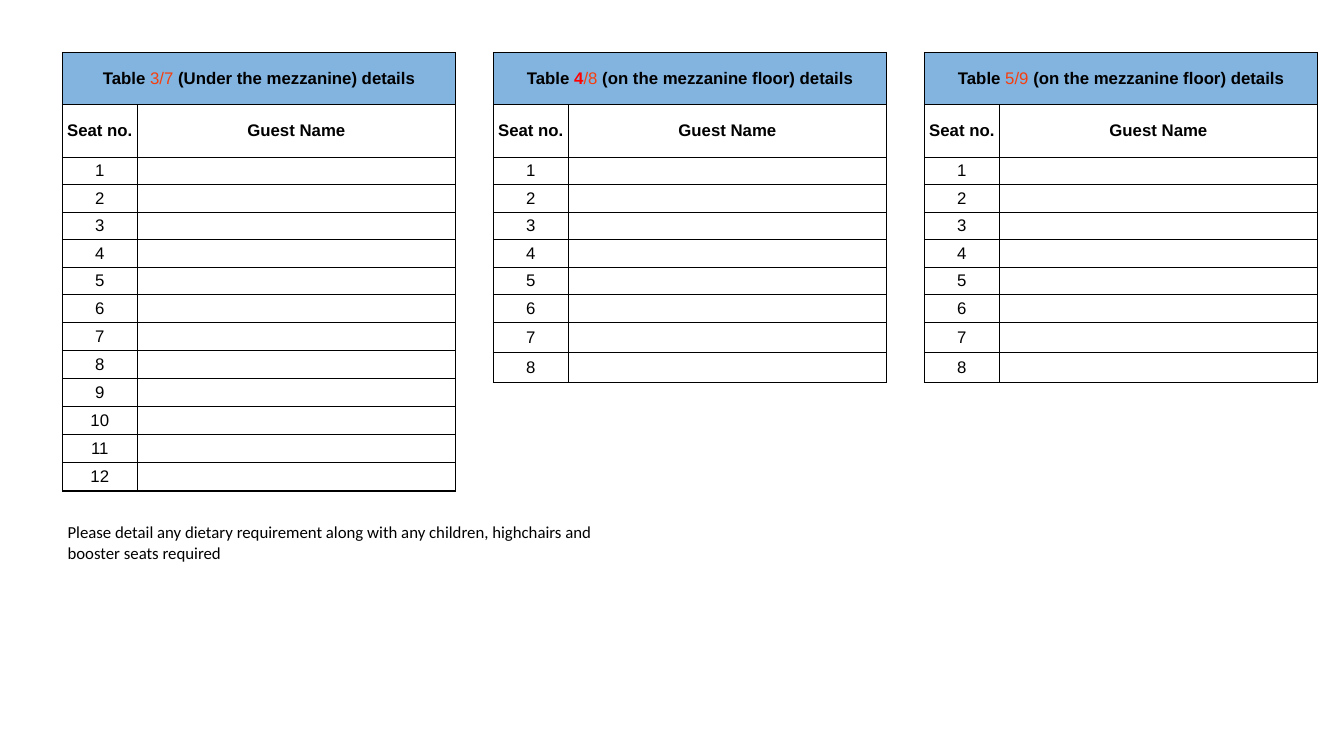
"""Builds a slide of three seating tables with a note on dietary requirements."""
from dataclasses import dataclass

from lxml import etree
from pptx import Presentation
from pptx import util as u
from pptx.dml.color import RGBColor
from pptx.enum import text
from pptx.oxml.ns import qn

COLUMN, ROW = 0.1, 0.13
LEFT, TOP, PITCH = 6.2, 4, 42.75
SEAT_WIDTH, NAME_WIDTH = 7.4, 31.6
HEADER_HEIGHT, SEAT_HEIGHT = 4, 2.1
EVEN_SEATS = 6
BLACK, WHITE, BLUE, ORANGE, RED = "000000", "FFFFFF", "83B3DF", "F53F0E", "FF0000"
NOTE = ("Please detail any dietary requirement along with any children, "
        "highchairs and booster seats required")


@dataclass(frozen=True)
class Span:
    words: str
    colour: str = BLACK
    bold: bool = True


@dataclass(frozen=True)
class Seating:
    number: tuple[Span, ...]
    place: str
    seats: int
    late_height: float


SEATINGS = (
    Seating((Span("3/7 ", ORANGE, False),), "Under the mezzanine", 12, 2.15),
    Seating((Span("4", RED), Span("/8 ", ORANGE, False)), "on the mezzanine floor", 8, 2.3),
    Seating((Span("5/9 ", ORANGE, False),), "on the mezzanine floor", 8, 2.3),
)


def across(columns: float) -> u.Length:
    return u.Inches(columns * COLUMN)


def down(rows: float) -> u.Length:
    return u.Inches(rows * ROW)


def paint(fill, colour: str) -> None:
    fill.solid()
    fill.fore_color.rgb = RGBColor.from_string(colour)


def write(para, spans: tuple[Span, ...], face: str = "Arial") -> None:
    for span in spans:
        run = para.add_run()
        run.text = span.words
        run.font.name, run.font.size, run.font.bold = face, u.Pt(12), span.bold
        run.font.color.rgb = RGBColor.from_string(span.colour)


def outline(cell) -> None:
    properties = cell._tc.get_or_add_tcPr()
    for side in ("a:lnL", "a:lnR", "a:lnT", "a:lnB"):
        line = etree.SubElement(properties, qn(side), w=str(u.Pt(1)))
        solid = etree.SubElement(line, qn("a:solidFill"))
        etree.SubElement(solid, qn("a:srgbClr"), val=BLACK)


def fill_cell(cell, spans: tuple[Span, ...] = ()) -> None:
    cell.margin_left = cell.margin_right = cell.margin_top = cell.margin_bottom = 0
    cell.vertical_anchor = text.MSO_ANCHOR.MIDDLE
    para = cell.text_frame.paragraphs[0]
    para.alignment = text.PP_ALIGN.CENTER
    write(para, spans)
    if not spans:
        etree.SubElement(para._p, qn("a:endParaRPr"), sz="1200")


def add_seating(page, seating: Seating, left: float) -> None:
    heights = [HEADER_HEIGHT] * 2 + [
        SEAT_HEIGHT if seat < EVEN_SEATS else seating.late_height
        for seat in range(seating.seats)]
    table = page.shapes.add_table(
        len(heights), 2, across(left), down(TOP),
        across(SEAT_WIDTH + NAME_WIDTH), down(sum(heights))).table
    table.first_row = table.horz_banding = False
    for column, width in zip(table.columns, (SEAT_WIDTH, NAME_WIDTH)):
        column.width = across(width)
    for row, height in zip(table.rows, heights):
        row.height = down(height)
    for cell in table.iter_cells():
        outline(cell)
        cell.fill.background()

    title = table.cell(0, 0)
    title.merge(table.cell(0, 1))
    paint(title.fill, BLUE)
    fill_cell(title, (Span("Table "), *seating.number, Span(f"({seating.place}) details")))
    fill_cell(table.cell(1, 0), (Span("Seat no."),))
    fill_cell(table.cell(1, 1), (Span("Guest Name"),))
    for seat in range(1, seating.seats + 1):
        fill_cell(table.cell(seat + 1, 0), (Span(str(seat), bold=False),))
        fill_cell(table.cell(seat + 1, 1))


def add_note(page) -> None:
    box = page.shapes.add_textbox(across(LEFT), down(39.46), across(54.5), down(3.85))
    paint(box.fill, WHITE)
    frame = box.text_frame
    frame.word_wrap = True
    frame.auto_size = text.MSO_AUTO_SIZE.SHAPE_TO_FIT_TEXT
    frame.margin_left = frame.margin_right = u.Inches(0.05)
    frame.margin_top = frame.margin_bottom = u.Inches(0.05)
    write(frame.paragraphs[0], (Span(NOTE, bold=False),), "Calibri")


def main() -> None:
    deck = Presentation()
    deck.slide_width, deck.slide_height = u.Inches(13.33), u.Inches(7.5)
    page = deck.slides.add_slide(deck.slide_layouts[6])
    for place, seating in enumerate(SEATINGS):
        add_seating(page, seating, LEFT + place * PITCH)
    add_note(page)
    deck.save("out.pptx")


if __name__ == "__main__":
    main()
